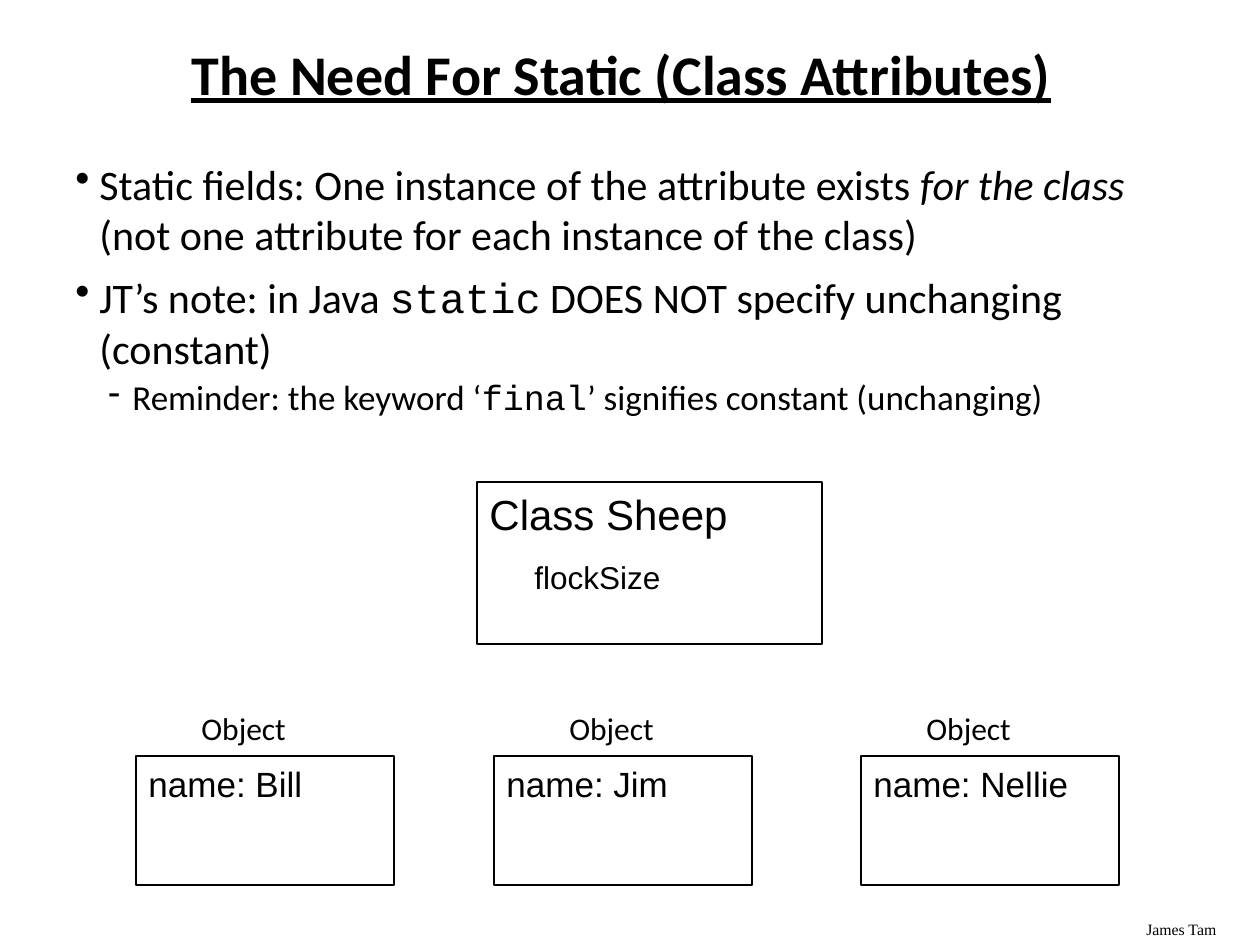
from lxml import etree
from pptx import Presentation, util as u
from pptx.dml.color import RGBColor
from pptx.enum import shapes, text
from pptx.oxml import ns

PX = 914400 // 126
BLACK = "000000"


def paint(color_format, hex_color):
    color_format.rgb = RGBColor.from_string(hex_color)


def write(paragraph, pieces, size, font="Calibri", before=0):
    """Fill a paragraph with (text, font, italic) pieces; before is a percentage."""
    for content, face, italic in pieces:
        run = paragraph.add_run()
        run.text = content
        run.font.size = u.Pt(size)
        run.font.name = face or font
        run.font.italic = italic
        paint(run.font.color, BLACK)
    if before:
        spacing = etree.SubElement(paragraph._p.get_or_add_pPr(), ns.qn("a:spcBef"))
        etree.SubElement(spacing, ns.qn("a:spcPct"), val=str(before * 1000))


deck = Presentation()
deck.slide_width, deck.slide_height = u.Inches(10), u.Inches(7.5)
slide = deck.slides.add_slide(deck.slide_layouts[6])

# Author footer
author = slide.shapes.add_textbox(1134 * PX, 914 * PX, 126 * PX, 32 * PX).text_frame
author.word_wrap = True
write(author.paragraphs[0], [("James Tam", None, None)], 9, "Times New Roman")

# Title
title = slide.shapes.add_textbox(59 * PX, 41 * PX, 1125 * PX, 72 * PX).text_frame
title.word_wrap = True
title.vertical_anchor = text.MSO_ANCHOR.MIDDLE
heading = title.paragraphs[0]
write(heading, [("The Need For Static (Class Attributes)", None, None)], 32)
heading.alignment = text.PP_ALIGN.CENTER
heading.line_spacing = 0.9
heading.runs[0].font.bold = heading.runs[0].font.underline = True

# Bulleted notes: level, bullet, left indent, size, space before, pieces
notes = [
    (0, "•", 24, 24, 30, [
        ("Static fields: One instance of the attribute exists ", None, None),
        ("for the class", None, True),
        (" (not one attribute for each instance of the class)", None, None)]),
    (0, "•", 24, 24, 30, [
        ("JT’s note: in Java ", None, None),
        ("static", "Courier New", None),
        (" DOES NOT specify unchanging (constant)", None, None)]),
    (1, "-", 57, 20, 10, [
        ("Reminder: the keyword ‘", None, None),
        ("final", "Courier New", None),
        ("’ signifies constant (unchanging)", None, None)]),
]
body = slide.shapes.add_textbox(63 * PX, 152 * PX, 1126 * PX, 740 * PX).text_frame
body.word_wrap = True
for number, (level, bullet, indent, size, before, pieces) in enumerate(notes):
    note = body.add_paragraph() if number else body.paragraphs[0]
    note.level = level
    write(note, pieces, size, before=before)
    properties = note._p.get_or_add_pPr()
    properties.set("marL", str(indent * PX))
    properties.set("indent", str(-24 * PX))
    etree.SubElement(properties, ns.qn("a:buChar"), char=bullet)

# Class box with its static field
sheep = slide.shapes.add_shape(
    shapes.MSO_SHAPE.RECTANGLE, 477 * PX, 482 * PX, 345 * PX, 162 * PX)
sheep.shadow.inherit = False
sheep.fill.background()
sheep.line.width = u.Pt(1)
paint(sheep.line.color, BLACK)
sheep.text_frame.word_wrap = True
sheep.text_frame.vertical_anchor = text.MSO_ANCHOR.TOP
sheep.text_frame.paragraphs[0].alignment = text.PP_ALIGN.LEFT
write(sheep.text_frame.paragraphs[0], [("Class Sheep", None, None)], 24, "Arial", 50)

flock_size = slide.shapes.add_textbox(522 * PX, 552 * PX, 200 * PX, 50 * PX).text_frame
flock_size.word_wrap = True
write(flock_size.paragraphs[0], [("flockSize", None, None)], 18, "Arial", 50)

# Objects: box left, label left, name
for left, label_left, name in [(136, 189, "Bill"), (494, 557, "Jim"), (861, 914, "Nellie")]:
    instance = slide.shapes.add_group_shape().shapes
    box = instance.add_shape(
        shapes.MSO_SHAPE.RECTANGLE, left * PX, 756 * PX, 258 * PX, 129 * PX)
    box.shadow.inherit = False
    box.fill.background()
    box.line.width = u.Pt(1)
    paint(box.line.color, BLACK)
    field = instance.add_textbox(left * PX, 756 * PX, 258 * PX, 50 * PX).text_frame
    field.word_wrap = True
    write(field.paragraphs[0], [(f"name: {name}", None, None)], 20, "Arial", 50)

    label = slide.shapes.add_textbox(label_left * PX, 703 * PX, 158 * PX, 50 * PX).text_frame
    label.word_wrap = True
    write(label.paragraphs[0], [("Object", None, None)], 18, before=50)

deck.save("out.pptx")
